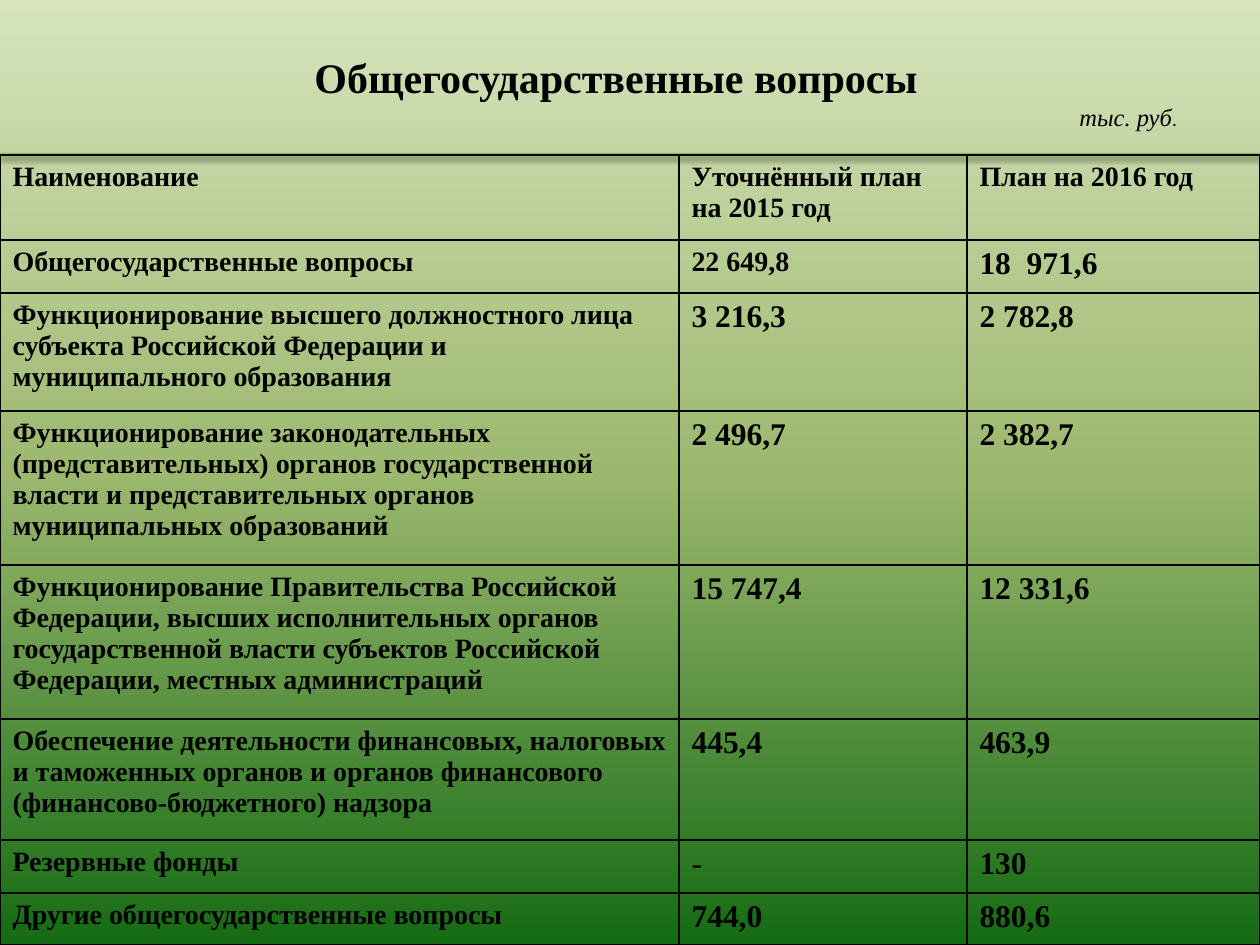
from dataclasses import dataclass
from typing import NamedTuple

from lxml.etree import SubElement
from pptx import Presentation
from pptx.dml.color import RGBColor
from pptx.enum.shapes import MSO_CONNECTOR
from pptx.enum.text import MSO_AUTO_SIZE
from pptx.oxml import parse_xml
from pptx.oxml.ns import nsdecls, qn
from pptx.util import Emu, Pt

EMU_PER_PIXEL = 914400 / 126


@dataclass(frozen=True)
class Theme:
    ink: str = "000000"
    rule: str = "9BBB59"
    background: tuple = ((0, "D7E4BD"), (50, "9CB86E"), (100, "156B13"))
    serif: str = "Times New Roman"
    sans: str = "Calibri"
    title_size: int = 24
    number_size: int = 18
    label_size: int = 16
    unit_size: int = 14
    period_size: int = 11
    rule_width: int = 2
    border_width: int = 1


THEME = Theme()


class Piece(NamedTuple):
    text: str
    size: int
    bold: bool = False
    italic: bool = False
    font: str = THEME.serif


class Box(NamedTuple):
    left: int
    top: int
    width: int
    height: int


class BudgetRow(NamedTuple):
    height: int
    name: str
    plan_2015: str
    plan_2016: str
    sizes: tuple = (THEME.label_size, THEME.number_size, THEME.number_size)


LABEL, NUMBER = THEME.label_size, THEME.number_size
COLUMN_WIDTHS = (679, 288, 293)
ROWS = (
    BudgetRow(85, "Наименование", "Уточнённый план на 2015 год", "План на 2016 год",
              (LABEL, LABEL, LABEL)),
    BudgetRow(53, "Общегосударственные вопросы", "22 649,8", "18  971,6",
              (LABEL, LABEL, NUMBER)),
    BudgetRow(118, "Функционирование высшего должностного лица субъекта Российской "
              "Федерации и муниципального образования", "3 216,3", "2 782,8"),
    BudgetRow(154, "Функционирование законодательных (представительных) органов "
              "государственной власти и представительных органов муниципальных "
              "образований", "2 496,7", "2 382,7"),
    BudgetRow(154, "Функционирование Правительства Российской Федерации, высших "
              "исполнительных органов государственной власти субъектов Российской "
              "Федерации, местных администраций", "15 747,4", "12 331,6"),
    BudgetRow(121, "Обеспечение деятельности финансовых, налоговых и таможенных органов "
              "и органов финансового (финансово-бюджетного) надзора", "445,4", "463,9"),
    BudgetRow(53, "Резервные фонды", "-", "130"),
    BudgetRow(52, "Другие общегосударственные вопросы", "744,0", "880,6"),
)
TABLE_BOX = Box(0, 155, sum(COLUMN_WIDTHS), sum(row.height for row in ROWS))


def px(length: int) -> Emu:
    return Emu(round(length * EMU_PER_PIXEL))


def write(paragraph, *pieces: Piece) -> None:
    for piece in pieces:
        run = paragraph.add_run()
        run.text = piece.text
        formats = {"name": piece.font, "size": Pt(piece.size),
                   "bold": piece.bold, "italic": piece.italic}
        for attribute, value in formats.items():
            setattr(run.font, attribute, value)
        run.font.color.rgb = RGBColor.from_string(THEME.ink)


def paint_background(slide) -> None:
    stops = "".join(f'<a:gs pos="{position * 1000}"><a:srgbClr val="{color}"/></a:gs>'
                    for position, color in THEME.background)
    fill = slide.background.fill
    fill.solid()
    properties = slide.element.find(".//" + qn("p:bgPr"))
    properties.replace(properties[0], parse_xml(
        f'<a:gradFill {nsdecls("a")} rotWithShape="1"><a:gsLst>{stops}</a:gsLst>'
        '<a:lin ang="5400000" scaled="0"/></a:gradFill>'))


def add_rule(slide, box: Box) -> None:
    rule = slide.shapes.add_connector(MSO_CONNECTOR.STRAIGHT, px(box.left + box.width),
                                      px(box.top), px(box.left), px(box.top))
    rule.line.color.rgb = RGBColor.from_string(THEME.rule)
    rule.line.width = Pt(THEME.rule_width)
    rule.element.spPr.append(parse_xml(
        f'<a:effectLst {nsdecls("a")}>'
        '<a:outerShdw blurRad="40000" dist="20000" dir="5400000" rotWithShape="0">'
        f'<a:srgbClr val="{THEME.ink}"><a:alpha val="38000"/></a:srgbClr>'
        '</a:outerShdw></a:effectLst>'))


def add_borders(cell) -> None:
    properties = cell._tc.get_or_add_tcPr()
    for index, side in enumerate(("lnL", "lnR", "lnT", "lnB")):
        border = parse_xml(f'<a:{side} {nsdecls("a")} w="{Pt(THEME.border_width)}"/>')
        fill = SubElement(border, qn("a:solidFill"))
        SubElement(fill, qn("a:srgbClr")).set("val", THEME.ink)
        properties.insert(index, border)


def add_budget_table(slide, box: Box) -> None:
    table = slide.shapes.add_table(len(ROWS), len(COLUMN_WIDTHS), *map(px, box)).table
    for option in ("first_row", "horz_banding"):
        setattr(table, option, False)
    for column, width in zip(table.columns, COLUMN_WIDTHS):
        column.width = px(width)
    for table_row, row in zip(table.rows, ROWS):
        table_row.height = px(row.height)
        texts = (row.name, row.plan_2015, row.plan_2016)
        for cell, text, size in zip(table_row.cells, texts, row.sizes):
            cell.fill.background()
            add_borders(cell)
            write(cell.text_frame.paragraphs[0], Piece(text, size, bold=text != "-"))


def add_text(slide, box: Box, *pieces: Piece, wrap: bool = True) -> None:
    frame = slide.shapes.add_textbox(*map(px, box)).text_frame
    frame.word_wrap = wrap
    frame.auto_size = MSO_AUTO_SIZE.NONE if wrap else MSO_AUTO_SIZE.SHAPE_TO_FIT_TEXT
    write(frame.paragraphs[0], *pieces)


def main() -> None:
    presentation = Presentation()
    presentation.slide_width, presentation.slide_height = px(1260), px(945)
    slide = presentation.slides.add_slide(presentation.slide_layouts[6])
    paint_background(slide)

    # Budget table under a shadowed rule
    add_rule(slide, TABLE_BOX)
    add_budget_table(slide, TABLE_BOX)

    # Title and unit of measure
    add_text(slide, Box(302, 45, 635, 63),
             Piece("Общегосударственные вопросы", THEME.title_size, bold=True), wrap=False)
    add_text(slide, Box(1067, 96, 179, 49),
             Piece("тыс. руб", THEME.unit_size, italic=True),
             Piece(".", THEME.period_size, font=THEME.sans))

    presentation.save("out.pptx")


if __name__ == "__main__":
    main()
